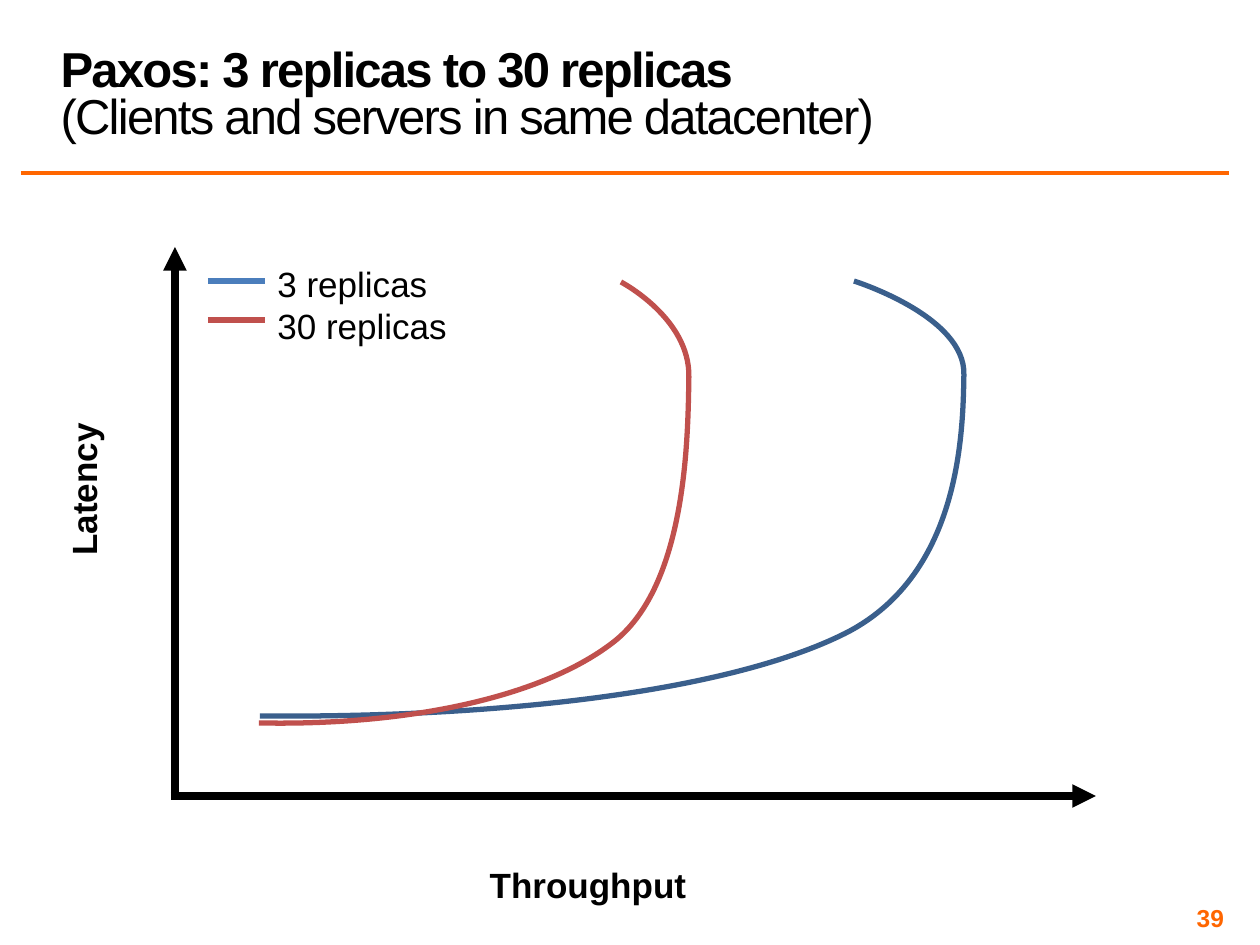
from pptx import Presentation
from pptx.dml.color import RGBColor
from pptx.enum.shapes import MSO_CONNECTOR
from pptx.enum.text import MSO_ANCHOR as ANCHOR, MSO_AUTO_SIZE as AUTO, PP_ALIGN as ALIGN
from pptx.oxml.ns import qn
from pptx.util import Inches, Pt
from lxml.etree import SubElement

PX = Inches(1) / 126
BLACK = RGBColor(0x00, 0x00, 0x00)
ORANGE = RGBColor(0xFF, 0x66, 0x00)
BLUE = RGBColor(0x4B, 0x7E, 0xBC)
NAVY = RGBColor(0x3A, 0x5F, 0x8C)
RED = RGBColor(0xC0, 0x50, 0x4D)

LABEL = {"size": Pt(20), "bold": True}
LEGEND = {"size": Pt(20), "bold": False}
NUMBER = {"size": Pt(14), "bold": True}

LEGEND_ROWS = [(281, BLUE), (320, RED)]
CURVES = [
    (NAVY, [(260, 716), (500, 718), (725, 692), (842, 635),
            (960, 578), (963, 435), (964, 375),
            (966, 316), (854, 281), (854, 281)]),
    (RED, [(259, 723), (406, 726), (543, 698), (615, 641),
           (687, 583), (688, 437), (689, 377),
           (690, 318), (621, 282), (621, 282)]),
]


def px(*values):
    return [round(v * PX) for v in values]


def set_attrs(obj, values):
    for name, value in values.items():
        setattr(obj, name, value)


def format_run(r, fmt, color=BLACK):
    set_attrs(r.font, {"name": "Arial", **fmt})
    r.font.color.rgb = color


def add_title(slide, bold_line, plain_line):
    sp = slide.shapes.title
    set_attrs(sp, dict(zip(("left", "top", "width", "height"), px(48, 3, 1181, 147))))
    tf = sp.text_frame
    set_attrs(tf, {"vertical_anchor": ANCHOR.BOTTOM, "auto_size": AUTO.NONE,
                   "word_wrap": True})
    p = tf.paragraphs[0]
    set_attrs(p, {"alignment": ALIGN.LEFT, "line_spacing": 0.8})
    for text, bold in ((bold_line, True), (plain_line, False)):
        if p.runs:
            p.add_line_break()
        r = p.add_run()
        r.text = text
        format_run(r, {"size": Pt(28), "bold": bold})
        r.font._element.set("spc", "-100")


def add_text(slide, box, lines, fmt, align=ALIGN.CENTER, color=BLACK, rotation=0, frame=None):
    sp = slide.shapes.add_textbox(*px(*box))
    sp.rotation = rotation
    tf = sp.text_frame
    set_attrs(tf, frame or {"word_wrap": False, "auto_size": AUTO.SHAPE_TO_FIT_TEXT})
    for i, line in enumerate(lines):
        p = tf.add_paragraph() if i else tf.paragraphs[0]
        p.alignment = align
        r = p.add_run()
        r.text = line
        format_run(r, fmt, color)


def add_line(slide, start, end, color, width, arrow=False):
    sp = slide.shapes.add_connector(MSO_CONNECTOR.STRAIGHT, *px(*start, *end))
    sp.line.color.rgb = color
    sp.line.width = Pt(width)
    if arrow:
        SubElement(sp.line._get_or_add_ln(), qn("a:tailEnd"), type="triangle")
    SubElement(sp._element.spPr, qn("a:effectLst"))


def add_curve(slide, color, points):
    builder = slide.shapes.build_freeform(*points[0], scale=PX)
    builder.add_line_segments(points[1:], close=False)
    sp = builder.convert_to_shape()
    sp.shadow.inherit = False
    sp.fill.background()
    sp.line.color.rgb = color
    sp.line.width = Pt(3)
    outline = sp._element.xpath(".//a:path")[0]
    segments = outline.findall(qn("a:lnTo"))
    for i in range(0, len(segments), 3):
        bezier = SubElement(outline, qn("a:cubicBezTo"))
        for segment in segments[i:i + 3]:
            bezier.append(segment[0])
            outline.remove(segment)


def main():
    prs = Presentation()
    set_attrs(prs, {"slide_width": Inches(10), "slide_height": Inches(7.5)})
    slide = prs.slides.add_slide(prs.slide_layouts[5])

    add_line(slide, (21, 173), (1229, 173), ORANGE, 2)
    add_title(slide, "Paxos: 3 replicas to 30 replicas",
              "(Clients and servers in same datacenter)")

    add_line(slide, (175, 799), (175, 247), BLACK, 4.5, arrow=True)
    add_text(slide, (4, 462, 159, 55), ["Latency"], LABEL, rotation=270)
    add_line(slide, (171, 796), (1096, 796), BLACK, 4.5, arrow=True)
    add_text(slide, (476, 857, 224, 55), ["Throughput"], LABEL)

    for color, points in CURVES:
        add_curve(slide, color, points)

    add_text(slide, (265, 256, 197, 97), ["3 replicas", "30 replicas"], LEGEND, ALIGN.LEFT)
    for y, color in LEGEND_ROWS:
        add_line(slide, (208, y), (265, y), color, 3)

    inset = px(5)[0]
    add_text(slide, (935, 903, 294, 29), ["39"], NUMBER, ALIGN.RIGHT, ORANGE,
             frame={"vertical_anchor": ANCHOR.MIDDLE, "word_wrap": True,
                    "margin_left": inset, "margin_right": inset,
                    "margin_top": inset, "margin_bottom": inset})

    prs.save("out.pptx")


if __name__ == "__main__":
    main()
